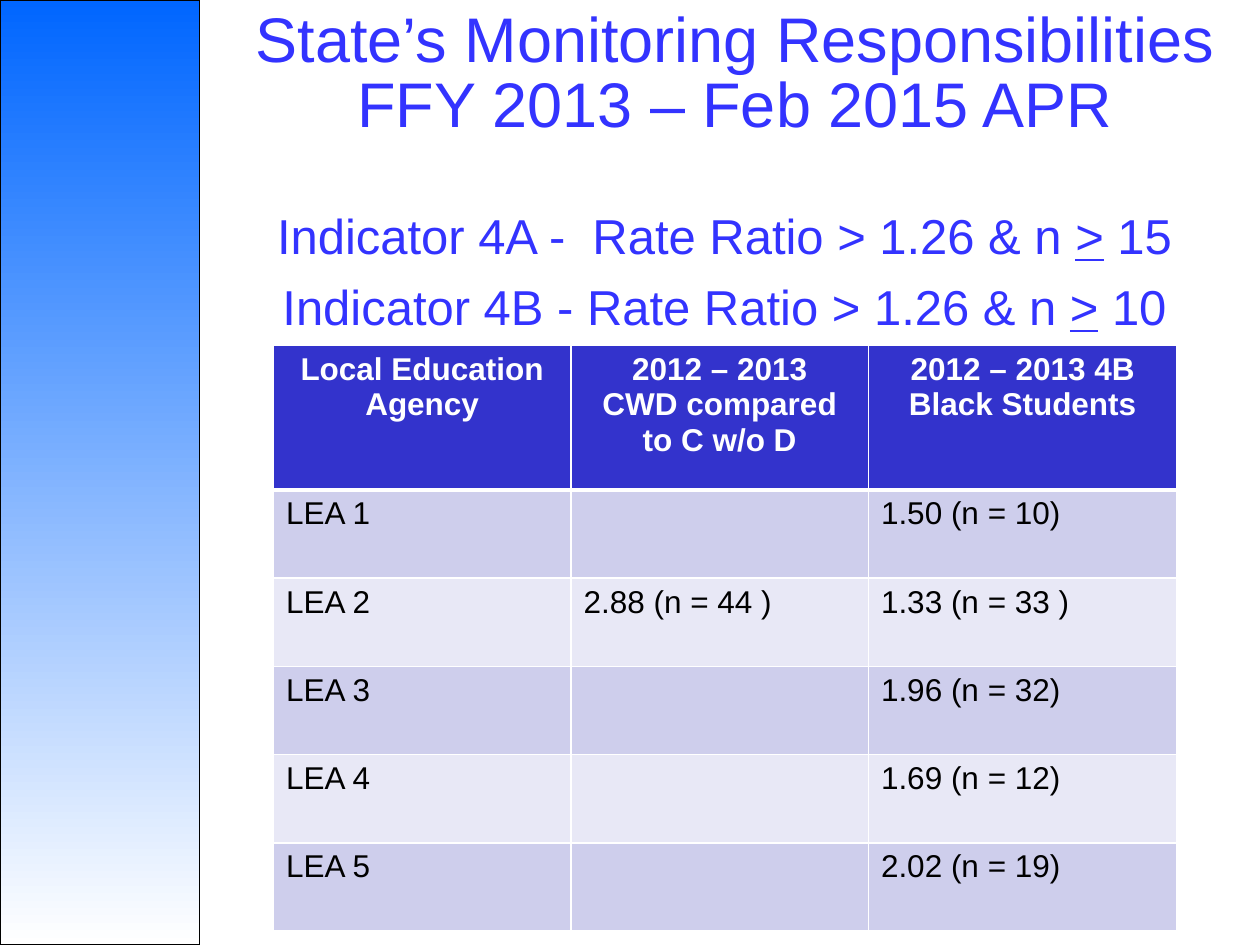
import pptx
import pptx.dml.color
import pptx.enum.shapes
import pptx.enum.text
import pptx.oxml
import pptx.oxml.ns
import pptx.util

Pt = pptx.util.Pt
Align = pptx.enum.text.PP_ALIGN
Anchor = pptx.enum.text.MSO_ANCHOR

# Content
TITLE = "State’s Monitoring Responsibilities\vFFY 2013 – Feb 2015 APR"
INDICATORS = [
    ("Indicator 4A -  Rate Ratio > 1.26 & n ", ">", " 15"),
    ("Indicator 4B - Rate Ratio > 1.26 & n ", ">", " 10"),
]
HEADERS = [
    ["Local Education Agency"],
    ["2012 – 2013", "CWD compared to C w/o D"],
    ["2012 – 2013 4B", "Black Students"],
]
AGENCIES = [
    ("LEA 1", "", "1.50 (n = 10)"),
    ("LEA 2", "2.88 (n = 44 )", "1.33 (n = 33 )"),
    ("LEA 3", "", "1.96 (n = 32)"),
    ("LEA 4", "", "1.69 (n = 12)"),
    ("LEA 5", "", "2.02 (n = 19)"),
]

THEME = {
    "font": "Arial",
    "title_size": 36, "indicator_size": 28, "table_size": 18,
    "heading": "3333FF", "header_fill": "3333CC", "header_text": "FFFFFF",
    "body_text": "000000", "bands": ("CECEEC", "E8E8F6"),
    "rule": "FFFFFF", "panel_top": "0066FF", "panel_bottom": "FFFFFF",
    "panel_line": "000000",
}

# Layout in points
SLIDE = (720, 540)
PANEL_WIDTH = 114
TITLE_BOX = (132, 24, 576, 96)
INDICATOR_BOX = (108, 114, 612, 342)
TABLE_ORIGIN = (156.25, 197.5)
COLUMNS = (170, 170, 176.25)
HEADER_HEIGHT, ROW_HEIGHT = 82.5, 50.4


def colour(key):
    return pptx.dml.color.RGBColor.from_string(THEME.get(key, key))


def add_run(paragraph, words, size, ink, bold=False, underline=False):
    run = paragraph.add_run()
    run.text = words
    run.font.name = THEME["font"]
    run.font.size = Pt(THEME[size])
    run.font.color.rgb = colour(ink)
    run.font.bold = bold
    run.font.underline = underline


def paragraph_at(frame, index):
    return frame.paragraphs[0] if index == 0 else frame.add_paragraph()


def add_text_box(slide, box):
    frame = slide.shapes.add_textbox(*map(Pt, box)).text_frame
    frame.word_wrap = True
    return frame


def add_side_panel(slide):
    panel = slide.shapes.add_shape(
        pptx.enum.shapes.MSO_SHAPE.RECTANGLE, 0, 0, Pt(PANEL_WIDTH), Pt(SLIDE[1]))
    panel.shadow.inherit = False
    panel.fill.gradient()
    panel.fill.gradient_angle = 270
    for stop, position, key in zip(panel.fill.gradient_stops, (0, 1),
                                   ("panel_top", "panel_bottom")):
        stop.position = position
        stop.color.rgb = colour(key)
    panel.line.color.rgb = colour("panel_line")
    panel.line.width = Pt(0.75)


def add_title(slide):
    frame = add_text_box(slide, TITLE_BOX)
    frame.vertical_anchor = Anchor.BOTTOM
    frame.margin_left = frame.margin_right = frame.margin_top = Pt(3.6)
    frame.margin_bottom = Pt(40)
    paragraph = frame.paragraphs[0]
    paragraph.alignment = Align.CENTER
    paragraph.line_spacing = 0.85
    for index, line in enumerate(TITLE.split("\v")):
        if index:
            paragraph.add_line_break()
        add_run(paragraph, line, "title_size", "heading")


def add_indicators(slide):
    frame = add_text_box(slide, INDICATOR_BOX)
    for index, parts in enumerate(INDICATORS):
        paragraph = paragraph_at(frame, index)
        paragraph.alignment = Align.CENTER
        paragraph.space_before = Pt(7)
        for part in parts:
            add_run(paragraph, part, "indicator_size", "heading", underline=part == ">")


def set_borders(cell, bottom=1, top=1):
    properties = cell._tc.get_or_add_tcPr()
    widths = (("lnL", 1), ("lnR", 1), ("lnT", top), ("lnB", bottom))
    for position, (side, width) in enumerate(widths):
        properties.insert(position, pptx.oxml.parse_xml(
            f'<a:{side} {pptx.oxml.ns.nsdecls("a")} w="{Pt(width)}">'
            f'<a:solidFill><a:srgbClr val="{THEME["rule"]}"/></a:solidFill></a:{side}>'))


def fill_cell(cell, lines, fill, ink, alignment, bold=False):
    cell.fill.solid()
    cell.fill.fore_color.rgb = colour(fill)
    for index, line in enumerate(lines):
        paragraph = paragraph_at(cell.text_frame, index)
        paragraph.alignment = alignment
        if line:
            add_run(paragraph, line, "table_size", ink, bold)


def add_agency_table(slide):
    height = HEADER_HEIGHT + ROW_HEIGHT * len(AGENCIES)
    table = slide.shapes.add_table(
        len(AGENCIES) + 1, len(COLUMNS), *map(Pt, TABLE_ORIGIN),
        Pt(sum(COLUMNS)), Pt(height)).table
    for column, width in zip(table.columns, COLUMNS):
        column.width = Pt(width)
    for index, row in enumerate(table.rows):
        row.height = Pt(ROW_HEIGHT if index else HEADER_HEIGHT)

    for column, lines in enumerate(HEADERS):
        cell = table.cell(0, column)
        fill_cell(cell, lines, "header_fill", "header_text", Align.CENTER, bold=True)
        set_borders(cell, bottom=3)
    for row, values in enumerate(AGENCIES, start=1):
        band = THEME["bands"][(row - 1) % 2]
        for column, value in enumerate(values):
            cell = table.cell(row, column)
            fill_cell(cell, [value], band, "body_text", Align.LEFT)
            set_borders(cell, top=3 if row == 1 else 1)


def main():
    deck = pptx.Presentation()
    deck.slide_width, deck.slide_height = map(Pt, SLIDE)
    slide = deck.slides.add_slide(deck.slide_layouts[6])
    add_side_panel(slide)
    add_title(slide)
    add_indicators(slide)
    add_agency_table(slide)
    deck.save("out.pptx")


if __name__ == "__main__":
    main()
